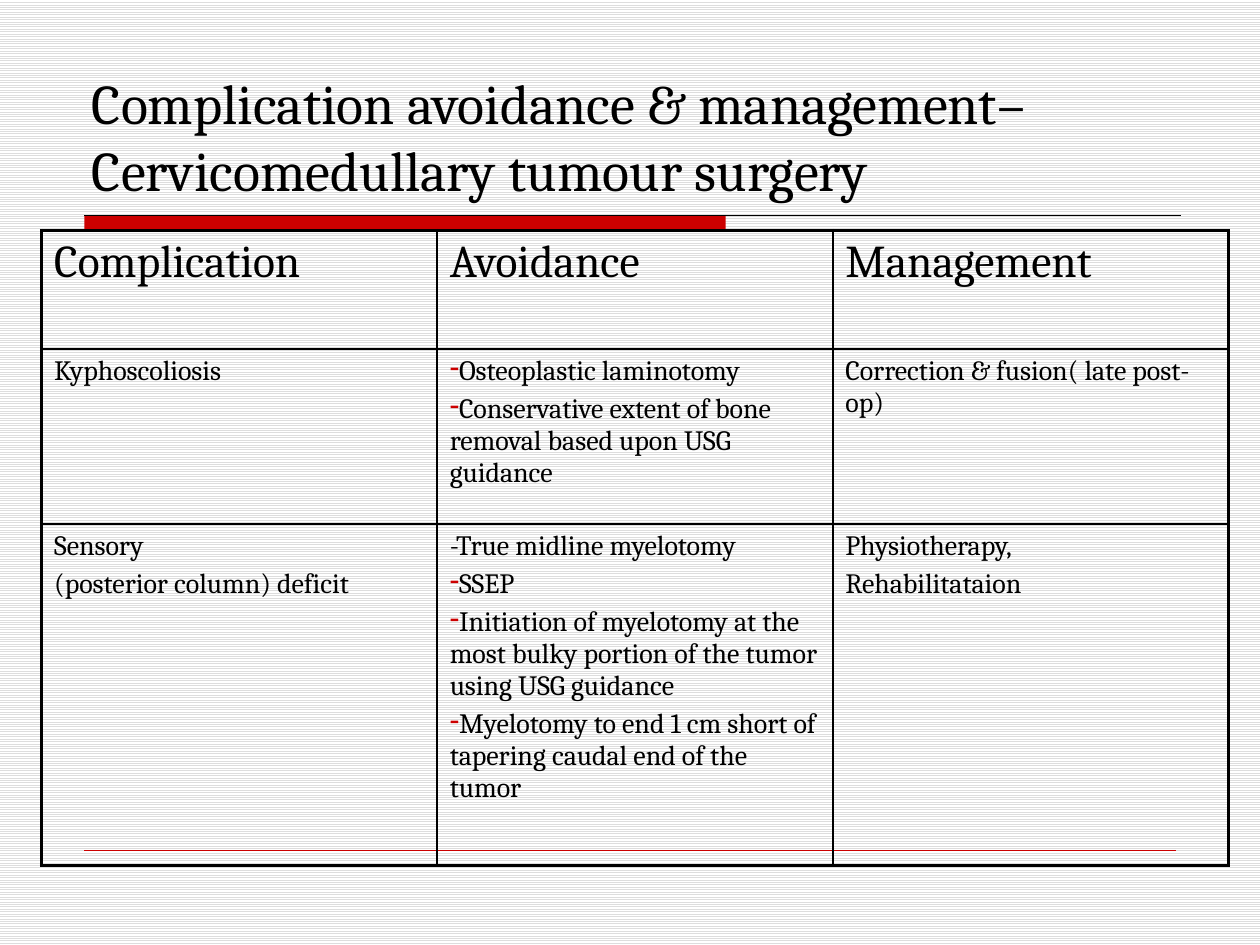
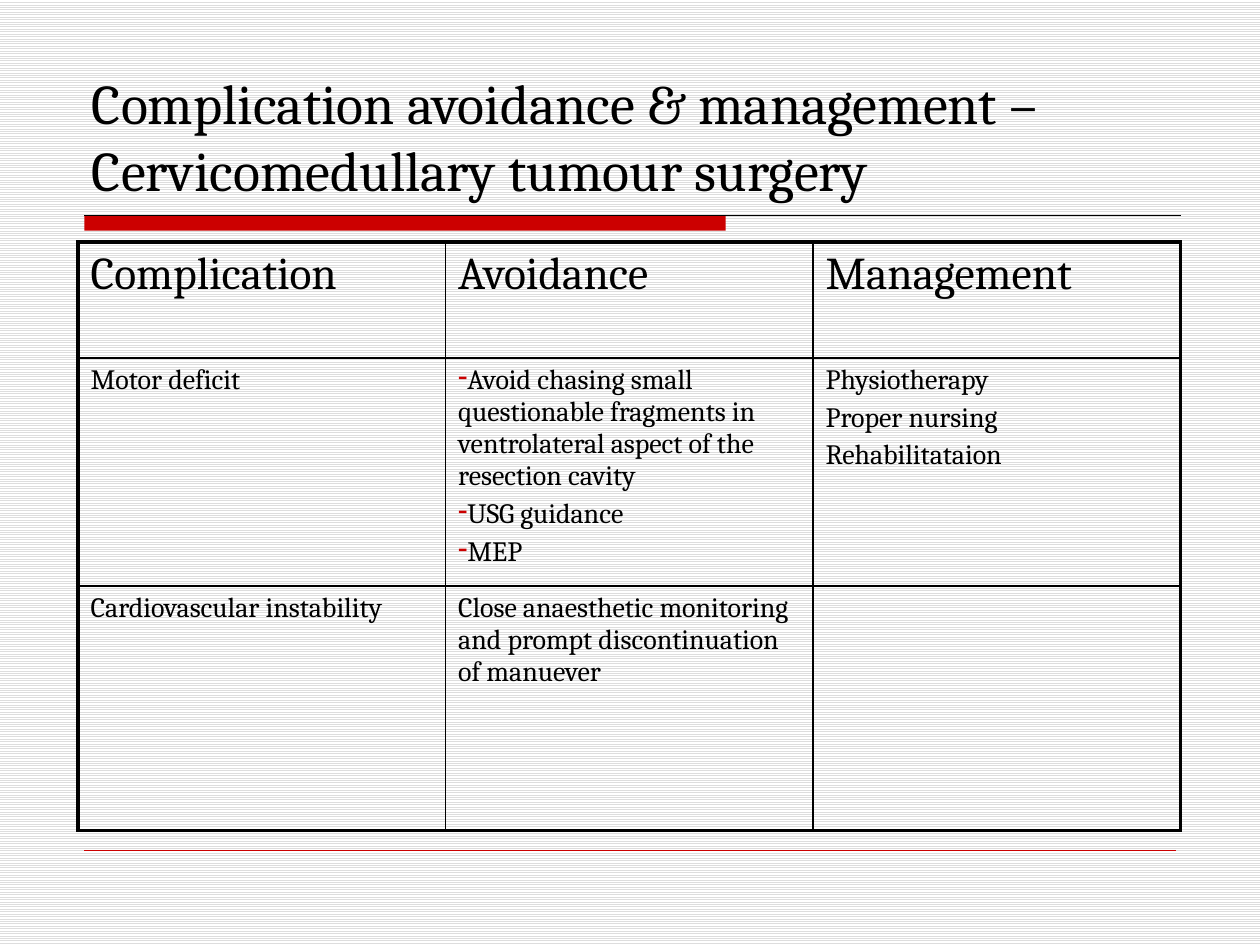
from lxml import etree
from pptx import Presentation
from pptx.dml.color import RGBColor
from pptx.enum.dml import MSO_PATTERN
from pptx.enum.shapes import MSO_CONNECTOR, MSO_SHAPE
from pptx.enum.text import MSO_ANCHOR, MSO_AUTO_SIZE, PP_ALIGN
from pptx.oxml.ns import qn
from pptx.util import Inches, Pt

# Content: a bulleted line is a one-item tuple
HEADINGS = ["Complication", "Avoidance", "Management"]
SLIDES = [
    {
        "title": "Complication avoidance & management– \vCervicomedullary tumour surgery",
        "left": 0.33, "top": 1.83, "width": 9.42, "row_heights": [0.94, 1.39, 2.71],
        "rows": [
            [["Kyphoscoliosis"],
             [("Osteoplastic laminotomy",),
              ("Conservative extent of bone removal based upon USG guidance",)],
             ["Correction & fusion( late post-op)"]],
            [["Sensory", "(posterior column) deficit"],
             ["-True midline myelotomy",
              ("SSEP",),
              ("Initiation of myelotomy at the most bulky portion of the tumor using USG guidance",),
              ("Myelotomy to end 1 cm short of tapering caudal end of the tumor",)],
             ["Physiotherapy,", "Rehabilitataion"]],
        ],
    },
    {
        "title": "Complication avoidance & management – \vCervicomedullary tumour surgery",
        "left": 0.62, "top": 1.92, "width": 8.75, "row_heights": [0.92, 1.81, 1.94],
        "rows": [
            [["Motor deficit"],
             [("Avoid chasing small questionable fragments in ventrolateral aspect of the resection cavity",),
              ("USG guidance",),
              ("MEP",)],
             ["Physiotherapy", "Proper nursing", "Rehabilitataion"]],
            [["Cardiovascular instability"],
             ["Close anaesthetic monitoring and prompt discontinuation of manuever"],
             []],
        ],
    },
]

# Shared look
BLACK = RGBColor(0x00, 0x00, 0x00)
RED = RGBColor(0xCC, 0x00, 0x00)
WHITE = RGBColor(0xFF, 0xFF, 0xFF)
STRIPE = RGBColor(0xDD, 0xDD, 0xDD)
FONT = "Cambria"
TITLE_SIZE, HEADING_SIZE, BODY_SIZE = 32, 26, 16
OUTER_BORDER, INNER_BORDER = 2.25, 1
TITLE_ONLY = 5
RECTANGLE = MSO_SHAPE.RECTANGLE
STRAIGHT = MSO_CONNECTOR.STRAIGHT
TITLE_BOX = {"left": 0.63, "top": 0.33, "width": 8.75, "height": 1.33}
TITLE_FRAME = {"word_wrap": True, "auto_size": MSO_AUTO_SIZE.NONE,
               "vertical_anchor": MSO_ANCHOR.BOTTOM}


def set_font(paragraph, size):
    for name, value in {"name": FONT, "size": Pt(size), "bold": False}.items():
        setattr(paragraph.font, name, value)
    paragraph.font.color.rgb = BLACK


def add_rule(slide, left, right, y, color, weight):
    rule = slide.shapes.add_connector(
        STRAIGHT, Inches(left), Inches(y), Inches(right), Inches(y))
    rule.line.color.rgb = color
    rule.line.width = Pt(weight)
    etree.SubElement(rule._element.spPr, qn("a:effectLst"))


def add_decoration(slide):
    bar = slide.shapes.add_shape(
        RECTANGLE, Inches(0.67), Inches(1.71), Inches(5.09), Inches(0.12))
    bar.shadow.inherit = False
    bar.fill.solid()
    bar.fill.fore_color.rgb = RED
    bar.line.fill.background()
    add_rule(slide, 0.67, 9.37, 1.71, BLACK, 0.75)
    add_rule(slide, 0.67, 9.33, 6.75, RED, 0.25)


def add_title(slide, text):
    title = slide.shapes.title
    for name, value in TITLE_BOX.items():
        setattr(title, name, Inches(value))
    for name, value in TITLE_FRAME.items():
        setattr(title.text_frame, name, value)
    title.text_frame.text = text
    paragraph = title.text_frame.paragraphs[0]
    paragraph.alignment = PP_ALIGN.LEFT
    set_font(paragraph, TITLE_SIZE)


def add_dash_bullet(paragraph):
    properties = paragraph._p.get_or_add_pPr()
    properties.set("marL", "0")
    properties.set("indent", "0")
    color = etree.SubElement(properties, qn("a:buClr"))
    etree.SubElement(color, qn("a:srgbClr"), val=str(RED))
    etree.SubElement(properties, qn("a:buChar"), char="-")


def set_borders(cell, weights):
    properties = cell._tc.get_or_add_tcPr()
    for position, (side, weight) in enumerate(weights.items()):
        line = etree.Element(qn(f"a:ln{side}"), w=str(Pt(weight)))
        fill = etree.SubElement(line, qn("a:solidFill"))
        etree.SubElement(fill, qn("a:srgbClr"), val=str(BLACK))
        properties.insert(position, line)


def fill_cell(cell, lines, size):
    frame = cell.text_frame
    for index, line in enumerate(lines):
        paragraph = frame.add_paragraph() if index else frame.paragraphs[0]
        bulleted = isinstance(line, tuple)
        paragraph.text = line[0] if bulleted else line
        paragraph.space_before = Pt(size * 0.2)
        if bulleted:
            add_dash_bullet(paragraph)
        set_font(paragraph, size)


def add_complication_table(slide, content):
    rows = [[[heading] for heading in HEADINGS]] + content["rows"]
    heights = content["row_heights"]
    last_row, last_column = len(rows) - 1, len(HEADINGS) - 1
    table = slide.shapes.add_table(
        len(rows), len(HEADINGS), Inches(content["left"]), Inches(content["top"]),
        Inches(content["width"]), Inches(sum(heights))).table
    table.first_row = table.horz_banding = False
    for row, height in zip(table.rows, heights):
        row.height = Inches(height)

    for r, row in enumerate(rows):
        for c, lines in enumerate(row):
            cell = table.cell(r, c)
            cell.fill.background()
            fill_cell(cell, lines, BODY_SIZE if r else HEADING_SIZE)
            outer_sides = {"L": c == 0, "R": c == last_column,
                           "T": r == 0, "B": r == last_row}
            set_borders(cell, {side: OUTER_BORDER if outer else INNER_BORDER
                               for side, outer in outer_sides.items()})


def main():
    presentation = Presentation()
    presentation.slide_width, presentation.slide_height = Inches(10), Inches(7.5)

    # Striped background for every slide
    background = presentation.slide_master.background.fill
    background.patterned()
    background.pattern = MSO_PATTERN.LIGHT_HORIZONTAL
    background.fore_color.rgb = STRIPE
    background.back_color.rgb = WHITE

    for content in SLIDES:
        slide = presentation.slides.add_slide(presentation.slide_layouts[TITLE_ONLY])
        add_decoration(slide)
        add_title(slide, content["title"])
        add_complication_table(slide, content)
    presentation.save("out.pptx")


if __name__ == "__main__":
    main()
